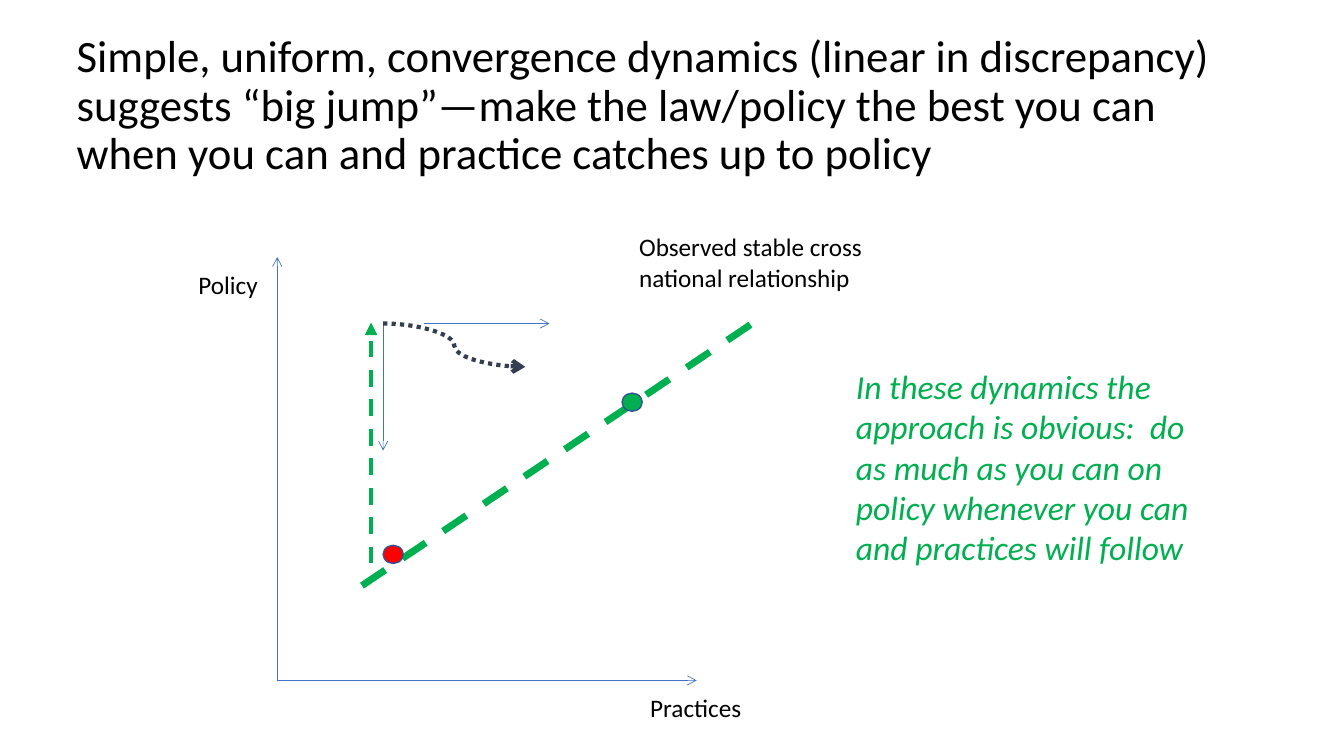
from lxml.etree import SubElement
from pptx import Presentation
from pptx.dml.color import RGBColor
from pptx.enum.dml import MSO_LINE
from pptx.enum.shapes import MSO_CONNECTOR, MSO_SHAPE
from pptx.enum.text import MSO_ANCHOR, MSO_AUTO_SIZE, PP_ALIGN
from pptx.oxml.ns import qn
from pptx.util import Emu, Pt

BLACK, GREEN, RED = "000000", "00B050", "FF0000"
BLUE, NAVY, SLATE = "4472C4", "325491", "333F50"
TITLE = ("Simple, uniform, convergence dynamics (linear in discrepancy) "
         "suggests “big jump”—make the law/policy the best you can "
         "when you can and practice catches up to policy")
ADVICE = ("In these dynamics the approach is obvious:  do as much as you can "
          "on policy whenever you can and practices will follow")


def px(n):
    return Emu(n * 9144)


def tint(code):
    return RGBColor.from_string(code)


def apply(item, **values):
    for name, value in values.items():
        setattr(item, name, value)


class Sketch:
    """Draws styled elements on the current slide."""

    def __init__(self, deck, font):
        self.slide = deck.slides.add_slide(deck.slide_layouts[5])
        self.shapes = self.slide.shapes
        self.font = font

    def prose(self, frame, text, size, color, italic=False):
        frame.text = text
        para = frame.paragraphs[0]
        para.alignment = PP_ALIGN.LEFT
        font = para.runs[0].font
        apply(font, name=self.font, size=Pt(size), bold=False, italic=italic)
        font.color.rgb = tint(color)
        return para

    def title(self, text, x, y, w, h):
        box = self.shapes.title
        apply(box, left=px(x), top=px(y), width=px(w), height=px(h))
        para = self.prose(box.text_frame, text, 32, BLACK)
        para.line_spacing = 0.9
        apply(box.text_frame, vertical_anchor=MSO_ANCHOR.TOP, margin_top=px(3),
              auto_size=MSO_AUTO_SIZE.NONE, word_wrap=True)

    def label(self, text, x, y, w, h, size=18, color=BLACK, italic=False, wrap=True):
        frame = self.shapes.add_textbox(px(x), px(y), px(w), px(h)).text_frame
        apply(frame, word_wrap=wrap, auto_size=MSO_AUTO_SIZE.SHAPE_TO_FIT_TEXT)
        self.prose(frame, text, size, color, italic)

    def line(self, start, end, color=BLUE, width=0.5, dash=None, head="arrow",
             kind=MSO_CONNECTOR.STRAIGHT):
        link = self.shapes.add_connector(kind, *map(px, start + end))
        link.line.color.rgb = tint(color)
        apply(link.line, width=Pt(width), dash_style=dash)
        props = link._element.spPr
        if head:
            SubElement(props.find(qn("a:ln")), qn("a:tailEnd"), type=head)
        SubElement(props, qn("a:effectLst"))

    def dot(self, x, y, color):
        dot = self.shapes.add_shape(MSO_SHAPE.OVAL, px(x), px(y), px(20), px(18))
        dot.shadow.inherit = False
        dot.fill.solid()
        dot.fill.fore_color.rgb = tint(color)
        dot.line.color.rgb = tint(NAVY)
        dot.line.width = Pt(1)


def main():
    deck = Presentation()
    apply(deck, slide_width=px(1333), slide_height=px(750))
    art = Sketch(deck, "Calibri")
    base, peak = (275, 675), (380, 321)

    art.line(base, (691, 675))
    art.line(base, (275, 255))
    art.line((359, 581), (746, 321), GREEN, 5, MSO_LINE.DASH, None)
    art.label("Policy", 187, 262, 80, 40, wrap=False)
    art.label("Practices", 635, 682, 112, 40, wrap=False)
    art.label("Observed stable cross national relationship", 624, 225, 268, 71)
    art.line((421, 321), (545, 321))
    art.line(peak, (380, 447))
    art.line(peak, (521, 364), SLATE, 3, MSO_LINE.ROUND_DOT, kind=MSO_CONNECTOR.CURVE)
    art.title(TITLE, 66, 31, 1176, 201)
    art.label(ADVICE, 839, 358, 355, 212, 24, GREEN, True)
    art.dot(380, 541, RED)
    art.dot(617, 390, GREEN)
    art.line((368, 559), (368, 320), GREEN, 3, MSO_LINE.DASH, "triangle")
    deck.save("out.pptx")


if __name__ == "__main__":
    main()
